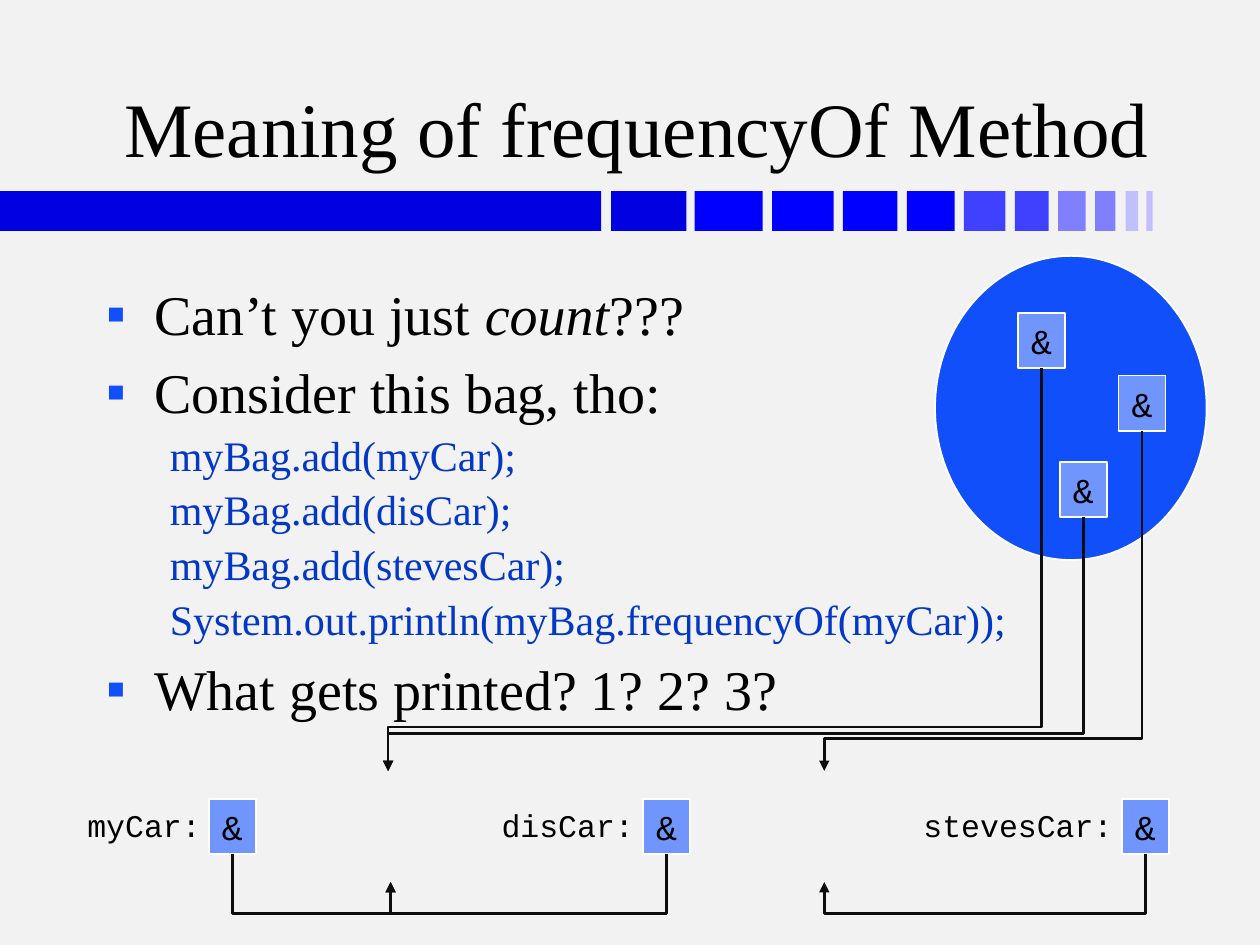
import pptx
import pptx.dml.color
import pptx.enum.dml
import pptx.enum.shapes
import pptx.enum.text
import pptx.oxml.ns
import pptx.util
from lxml import etree

Pt = pptx.util.Pt
qn = pptx.oxml.ns.qn
SHAPES = pptx.enum.shapes.MSO_SHAPE
ALIGN = pptx.enum.text.PP_ALIGN
ANCHOR = pptx.enum.text.MSO_ANCHOR
GROW = pptx.enum.text.MSO_AUTO_SIZE.SHAPE_TO_FIT_TEXT


def paint(colored, hex_color):
    """Give a fill, or the fill of a line, one solid colour."""
    colored.solid()
    colored.fore_color.rgb = pptx.dml.color.RGBColor.from_string(hex_color)


def write(frame, text, size=32, color="000000", font="Times New Roman", align=ALIGN.LEFT,
          indent=0, hanging=0, before=0, bullet=None):
    """Add one paragraph; text between asterisks is italic, before is a percentage."""
    paragraph = frame.add_paragraph() if frame.text else frame.paragraphs[0]
    paragraph.alignment = align
    for number, part in enumerate(text.split("*")):
        run = paragraph.add_run()
        run.text = part
        run.font.size = Pt(size)
        run.font.name = font
        run.font.italic = number % 2 == 1
        paint(run.font.fill, color)
    props = paragraph._p.get_or_add_pPr()
    props.set("marL", str(Pt(indent)))
    props.set("indent", str(Pt(-hanging)))
    spacing = etree.SubElement(props, qn("a:spcBef"))
    etree.SubElement(spacing, qn("a:spcPct"), val=str(before * 1000))
    if bullet:
        bullet_color = etree.SubElement(props, qn("a:buClr"))
        etree.SubElement(bullet_color, qn("a:srgbClr"), val="114FFB")
        etree.SubElement(props, qn("a:buFont"), typeface=font)
        etree.SubElement(props, qn("a:buChar"), char=bullet)


deck = pptx.Presentation()
deck.slide_width, deck.slide_height = Pt(720), Pt(540)
slide = deck.slides.add_slide(deck.slide_layouts[6])
paint(slide.background.fill, "F2F2F2")

# Fading bar under the title: left, width, colour
segments = [
    (0, 343.5, "0000E0"), (349.2, 43, "0000E0"), (396.9, 39, "0000FF"),
    (441.2, 35.2, "0000FF"), (481.6, 31.3, "0000FF"), (518.3, 27.2, "0000FF"),
    (550.8, 23.7, "4040FF"), (579.9, 19.4, "4040FF"), (604.6, 15.8, "8080FF"),
    (625.8, 11.6, "8080FF"), (643.2, 7.2, "C0C0FF"), (655, 3.6, "C0C0FF"),
]
for left, width, color in segments:
    segment = slide.shapes.add_shape(SHAPES.RECTANGLE, Pt(left), Pt(109.2), Pt(width), Pt(22.8))
    segment.shadow.inherit = False
    paint(segment.fill, color)
    segment.line.fill.background()

# Title
title = slide.shapes.add_textbox(Pt(53.3), Pt(13.7), Pt(610.6), Pt(88.6)).text_frame
title.word_wrap = True
title.vertical_anchor = ANCHOR.BOTTOM
write(title, "Meaning of frequencyOf Method", size=44, align=ALIGN.RIGHT)

# Questions and code
body = slide.shapes.add_textbox(Pt(54), Pt(156.2), Pt(612), Pt(324)).text_frame
body.word_wrap = True
question = dict(indent=27, hanging=27, before=20, bullet="▪")
write(body, "Can’t you just *count*???", **question)
write(body, "Consider this bag, tho:", **question)
for code in ["myBag.add(myCar);", "myBag.add(disCar);", "myBag.add(stevesCar);",
             "System.out.println(myBag.frequencyOf(myCar));"]:
    write(body, code, size=24, color="0337C6", indent=36, before=10)
write(body, "What gets printed? 1? 2? 3?", **question)

# Bag
bag = slide.shapes.add_shape(SHAPES.OVAL, Pt(534.3), Pt(146.2), Pt(155.2), Pt(173.8))
bag.shadow.inherit = False
paint(bag.fill, "114FFB")
paint(bag.line.fill, "FFFFFF")
bag.line.width = Pt(1)

# Variable names: left, width
for name, left, width in [("myCar:", 41.8, 80), ("disCar:", 278.6, 90.7),
                          ("stevesCar:", 519.8, 123)]:
    label = slide.shapes.add_textbox(Pt(left), Pt(457.2), Pt(width), Pt(28.8)).text_frame
    label.word_wrap = False
    label.auto_size = GROW
    write(label, name, size=18, font="Courier New", align=ALIGN.RIGHT)

# References: cell centre, cell top, then the bend height and arrow tip
CELL_WIDTH, CELL_HEIGHT = 26.8, 31.6
references = [
    (132.8, 456.5, 522, 223.2, 504),
    (380.9, 456.5, 522, 223.2, 504),
    (654.5, 456.5, 522, 471, 504),
    (595.2, 178.8, 415.6, 221.8, 440.6),
    (652.6, 214.6, 421.9, 471, 440.6),
    (619.1, 263.9, 419, 221.8, 440.6),
]
for center, top, bend, tip_x, tip_y in references:
    cell = slide.shapes.add_shape(SHAPES.RECTANGLE, Pt(center - CELL_WIDTH / 2), Pt(top),
                                  Pt(CELL_WIDTH), Pt(CELL_HEIGHT))
    cell.shadow.inherit = False
    paint(cell.fill, "7095FD")
    paint(cell.line.fill, "FFFFFF")
    cell.line.width = Pt(1)
    cell.text_frame.word_wrap = False
    cell.text_frame.auto_size = GROW
    cell.text_frame.vertical_anchor = ANCHOR.MIDDLE
    write(cell.text_frame, "&", size=20, font="Courier New", align=ALIGN.CENTER)

    # The elbow lies on its side, so its frame is turned about its middle
    start_y = top + CELL_HEIGHT
    drop, reach = tip_y - start_y, abs(tip_x - center)
    middle_x, middle_y = (center + tip_x) / 2, (start_y + tip_y) / 2
    arrow = slide.shapes.add_connector(
        pptx.enum.shapes.MSO_CONNECTOR.ELBOW,
        Pt(middle_x - drop / 2), Pt(middle_y - reach / 2),
        Pt(middle_x + drop / 2), Pt(middle_y + reach / 2))
    paint(arrow.line.fill, "0D0D0D")
    arrow.line.width = Pt(1.5)
    props = arrow._element.spPr
    frame = props.find(qn("a:xfrm"))
    if tip_x < center:
        frame.set("rot", "5400000")
    else:
        frame.set("rot", "16200000")
        frame.set("flipH", "1")
    bend_share = round((bend - start_y) / drop * 100000)
    adjustments = props.find(qn("a:prstGeom")).get_or_add_avLst()
    etree.SubElement(adjustments, qn("a:gd"), name="adj1", fmla=f"val {bend_share}")
    etree.SubElement(props.find(qn("a:ln")), qn("a:tailEnd"), type="triangle")
    etree.SubElement(props, qn("a:effectLst"))

deck.save("out.pptx")
